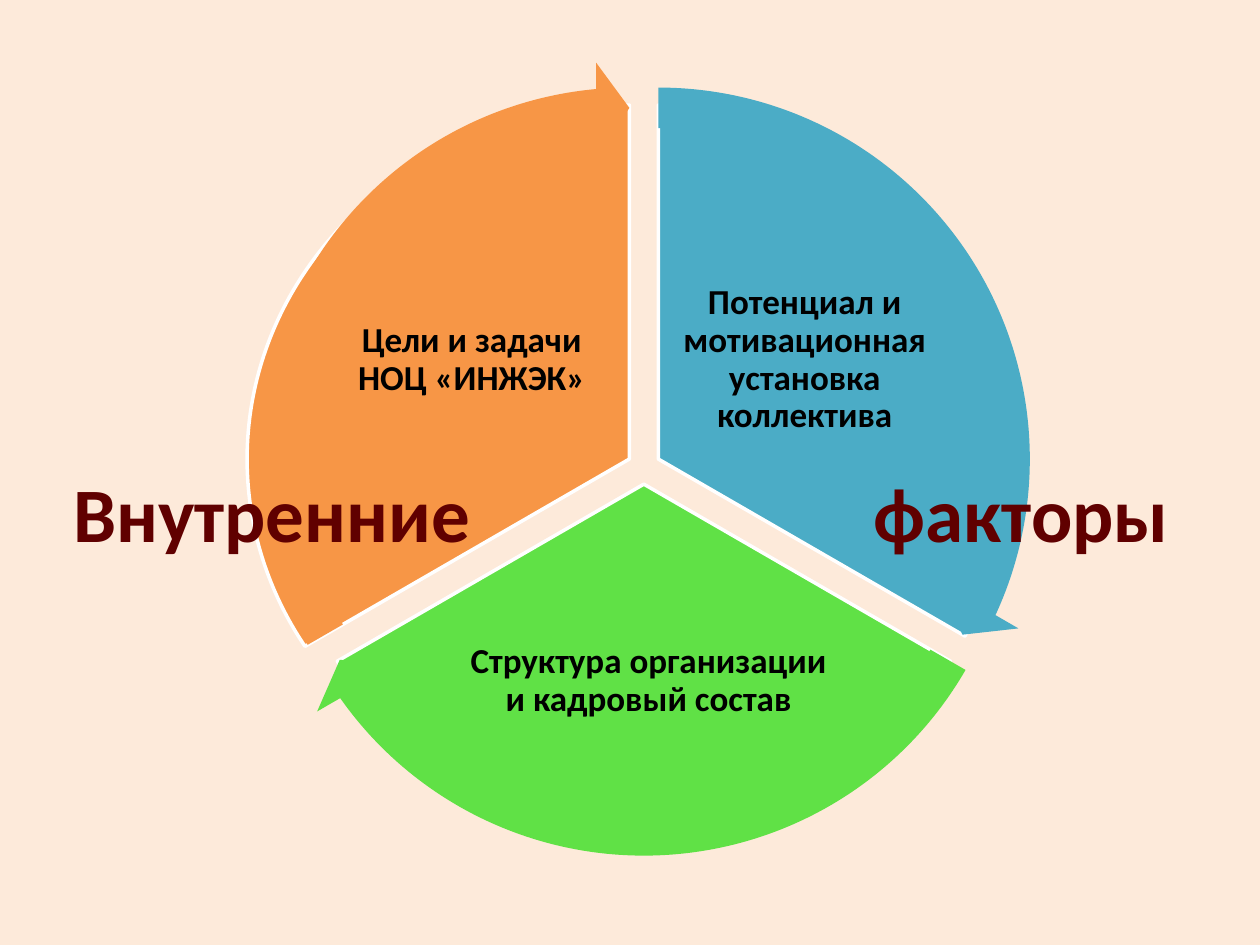
from math import cos, radians, sin

from lxml import etree
from pptx import Presentation
from pptx.dml.color import RGBColor
from pptx.enum.shapes import MSO_SHAPE
from pptx.enum.text import MSO_ANCHOR, PP_ALIGN
from pptx.oxml.ns import qn
from pptx.util import Inches, Pt

PIE, ARROW = MSO_SHAPE.PIE, MSO_SHAPE.CIRCULAR_ARROW
MIDDLE, LEFT, CENTER = MSO_ANCHOR.MIDDLE, PP_ALIGN.LEFT, PP_ALIGN.CENTER
FONT = "Calibri"
DEGREE = 0.6  # one degree in adjustment units

# Shares of the wheel box, in percent
DISC, GAP = 88.9, 2.1
# Colour, middle angle, disc width factor, arrow start and end angles,
# label, label centre from the wheel centre, label size
SECTORS = [
    ("4BACC6", -30, 1, 269.99, 24.54, "Потенциал и мотивационная установка коллектива",
     (20.2, -13.5), (31.8, 26.4)),
    ("60E146", 90, 1, 30.01, 144.53, "Структура организации и кадровый состав",
     (0.6, 26.8), (47.6, 23.3)),
    ("F79646", 210, 1.08, 150, 264.55, "Цели и задачи НОЦ «ИНЖЭК»",
     (-21.6, -13.5), (34.3, 26.4)),
]


def rgb(value):
    return RGBColor.from_string(value)


def centred(cx, cy, w, h):
    return [Inches(v) for v in (cx - w / 2, cy - h / 2, w, h)]


def add_solid(s, kind, box, color, adjustments, line=None):
    sp = s.shapes.add_shape(kind, *box)
    sp.shadow.inherit = False
    for i, value in enumerate(adjustments):
        sp.adjustments[i] = value
    sp.fill.solid()
    sp.fill.fore_color.rgb = rgb(color)
    if line:
        sp.line.color.rgb = rgb(line)
        sp.line.width = Pt(2)
    else:
        sp.line.fill.background()


def add_text(s, box, text, size, color, align, inset):
    tf = s.shapes.add_textbox(*box).text_frame
    tf.word_wrap = True
    tf.vertical_anchor = MIDDLE
    tf.margin_left = tf.margin_right = Inches(inset)
    tf.margin_top = tf.margin_bottom = Inches(0.03)
    tf.text = text
    p = tf.paragraphs[0]
    p.alignment = align
    for r in p.runs:
        r.font.name, r.font.size, r.font.bold = FONT, Pt(size), True
        r.font.color.rgb = rgb(color)
    return p


def add_wheel(s, left, top, side):
    unit = side / 100
    cx, cy = left + side / 2, top + side / 2

    def sector_centre(angle):
        return (cx + GAP * unit * cos(radians(angle)),
                cy + GAP * unit * sin(radians(angle)))

    # Sectors with their labels
    for color, angle, stretch, _, _, label, (dx, dy), (w, h) in SECTORS:
        disc = DISC * unit
        edges = [(angle + turn) % 360 * DEGREE for turn in (-60, 60)]
        box = centred(*sector_centre(angle), disc * stretch, disc)
        add_solid(s, PIE, box, color, edges, "FFFFFF")
        box = centred(cx + dx * unit, cy + dy * unit, w * unit, h * unit)
        p = add_text(s, box, label, 20, "000000", CENTER, 0.03)
        p.line_spacing = 0.9

    # Arrows around the rim
    for color, angle, _, start, end, *_ in SECTORS:
        box = centred(*sector_centre(angle), side, side)
        add_solid(s, ARROW, box, color,
                  (0.051, 3.275, end * DEGREE, start * DEGREE, 0.059))


def add_title(s, left, top, width, height):
    box = [Inches(v) for v in (left, top, width, height)]
    p = add_text(s, box, "Внутренние\tфакторы", 44, "600000", LEFT, 0.15)
    # The second word starts at a tab stop on the far side of the wheel
    tabs = etree.SubElement(p._p.get_or_add_pPr(), qn("a:tabLst"))
    etree.SubElement(tabs, qn("a:tab"), pos=str(Inches(width * 0.7)), algn="l")


def main():
    prs = Presentation()
    prs.slide_width, prs.slide_height = Inches(10), Inches(7.5)
    s = prs.slides.add_slide(prs.slide_layouts[6])
    s.background.fill.solid()
    s.background.fill.fore_color.rgb = rgb("FDEADA")
    add_wheel(s, 1.95, 0.55, 6.32)
    add_title(s, 0.43, 0.36, 9.08, 7.4)
    prs.save("out.pptx")


if __name__ == "__main__":
    main()
